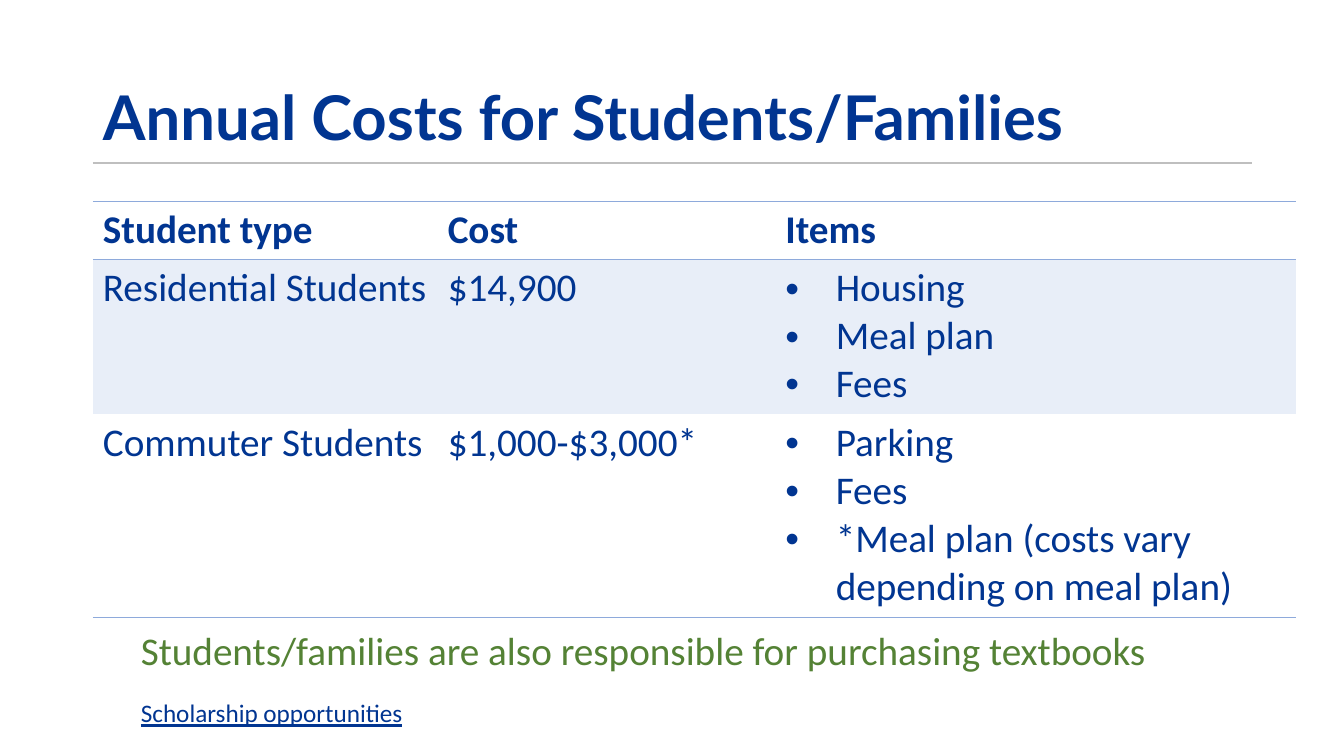
from lxml.etree import SubElement
from pptx import Presentation
from pptx.dml.color import RGBColor
from pptx.enum.shapes import MSO_CONNECTOR as Connector
from pptx.enum.text import MSO_ANCHOR as Anchor, MSO_AUTO_SIZE as AutoSize, PP_ALIGN as Align
from pptx.oxml import parse_xml
from pptx.oxml.ns import nsdecls, qn
from pptx.util import Cm, Pt

NAVY, GREEN, BLUE = "013591", "548235", "8EAADB"
PALE_BLUE, WHITE, GREY = "E8EEF8", "FFFFFF", "BFBFBF"
LEFT = 2.34
COLUMN_WIDTHS = (8.69, 8.51, 13.11)
ROW_HEIGHTS = (1.46, 3.9, 5.12)
COST_ROWS = (
    (("Student type",), ("Cost",), ("Items",)),
    (("Residential Students",), ("$14,900",), ("Housing", "Meal plan", "Fees")),
    (("Commuter Students",), ("$1,000-$3,000*",),
     ("Parking", "Fees", "*Meal plan (costs vary depending on meal plan)")),
)
TITLE_FORMAT = {"name": "Lato", "size": Pt(44), "bold": True}
HEADER_FORMAT = {"name": "Calibri", "size": Pt(28), "bold": True}
BODY_FORMAT = {"name": "Calibri", "size": Pt(28), "bold": False}
LINK_FORMAT = {"name": "Calibri", "size": Pt(18), "underline": True}


def color(value):
    """Return the colour for a hex string."""
    return RGBColor.from_string(value)


def format_text(paragraph, values, text_color):
    """Apply font values and a colour to a paragraph's runs."""
    for run in paragraph.runs:
        for name, value in values.items():
            setattr(run.font, name, value)
        run.font.color.rgb = color(text_color)


def add_bullet(paragraph):
    """Give a paragraph a hanging round bullet."""
    properties = paragraph._p.get_or_add_pPr()
    properties.set("marL", str(Cm(1.27)))
    properties.set("indent", str(-Cm(1.27)))
    SubElement(properties, qn("a:buFont")).set("typeface", "Arial")
    SubElement(properties, qn("a:buChar")).set("char", "•")


def set_borders(cell, sides):
    """Draw the named sides of a cell and clear the others."""
    properties = cell._tc.get_or_add_tcPr()
    for index, side in enumerate("LRTB"):
        paint = (f'<a:solidFill><a:srgbClr val="{BLUE}"/></a:solidFill>'
                 if side in sides else "<a:noFill/>")
        properties.insert(index, parse_xml(
            f'<a:ln{side} {nsdecls("a")} w="{Pt(1)}">{paint}</a:ln{side}>'))


def fill_cell(cell, lines, values, background, sides, bulleted):
    """Write and style one table cell."""
    cell.text = "\n".join(lines)
    for paragraph in cell.text_frame.paragraphs:
        if bulleted:
            add_bullet(paragraph)
        format_text(paragraph, values, NAVY)
    cell.fill.solid()
    cell.fill.fore_color.rgb = color(background)
    set_borders(cell, sides)


def add_cost_table(slide):
    """Add the table of costs by student type."""
    table = slide.shapes.add_table(
        len(ROW_HEIGHTS), len(COLUMN_WIDTHS), Cm(LEFT), Cm(5.08),
        Cm(sum(COLUMN_WIDTHS)), Cm(sum(ROW_HEIGHTS))).table
    table.first_row = True
    table.horz_banding = False
    for column, width in zip(table.columns, COLUMN_WIDTHS):
        column.width = Cm(width)
    for row, height in zip(table.rows, ROW_HEIGHTS):
        row.height = Cm(height)
    row_styles = ((HEADER_FORMAT, WHITE, "TB"), (BODY_FORMAT, PALE_BLUE, "T"),
                  (BODY_FORMAT, WHITE, "B"))
    for row, contents, style in zip(table.rows, COST_ROWS, row_styles):
        for cell, lines in zip(row.cells, contents):
            fill_cell(cell, lines, *style, bulleted=len(lines) > 1)


def add_title(slide, text):
    """Place and format the slide title."""
    title = slide.shapes.title
    title.left, title.top, title.width, title.height = (
        Cm(LEFT), Cm(1.6), Cm(29.26), Cm(2.41))
    frame = title.text_frame
    frame.text = text
    frame.vertical_anchor = Anchor.BOTTOM
    frame.auto_size = AutoSize.NONE
    paragraph = frame.paragraphs[0]
    paragraph.alignment = Align.LEFT
    paragraph.line_spacing = 0.9
    format_text(paragraph, TITLE_FORMAT, NAVY)


def add_rule(slide):
    """Add the grey line under the title."""
    rule = slide.shapes.add_connector(
        Connector.STRAIGHT, Cm(LEFT), Cm(4.11), Cm(31.55), Cm(4.11))
    rule.line.color.rgb = color(GREY)
    rule.line.width = Pt(1)
    SubElement(rule._element.spPr, qn("a:effectLst"))


def add_note(slide, text, top, width, height, values, text_color):
    """Add a line of text below the table."""
    frame = slide.shapes.add_textbox(
        Cm(3.3), Cm(top), Cm(width), Cm(height)).text_frame
    frame.word_wrap = True
    frame.text = text
    format_text(frame.paragraphs[0], values, text_color)


def main():
    """Build and save the slide."""
    presentation = Presentation()
    presentation.slide_width, presentation.slide_height = Cm(33.87), Cm(19.05)
    slide = presentation.slides.add_slide(presentation.slide_layouts[5])
    add_rule(slide)
    add_title(slide, "Annual Costs for Students/Families")
    add_cost_table(slide)
    add_note(slide, "Students/families are also responsible for purchasing textbooks",
             15.67, 26.11, 1.45, BODY_FORMAT, GREEN)
    add_note(slide, "Scholarship opportunities", 17.45, 16.94, 1.02, LINK_FORMAT, NAVY)
    presentation.save("out.pptx")


if __name__ == "__main__":
    main()
